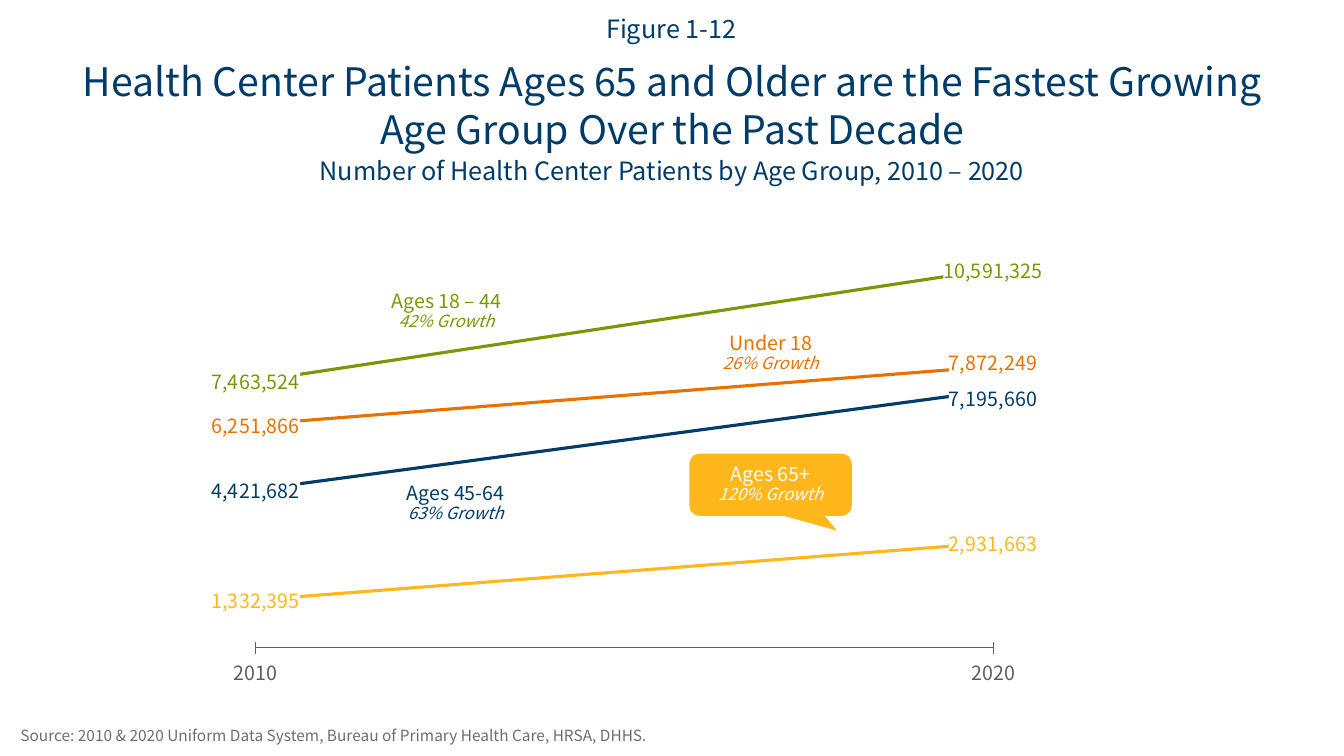
from pptx import Presentation
from pptx.chart.data import CategoryChartData
from pptx.dml.color import RGBColor
from pptx.enum.chart import XL_CHART_TYPE, XL_LABEL_POSITION, XL_MARKER_STYLE, XL_TICK_LABEL_POSITION, XL_TICK_MARK
from pptx.enum.shapes import MSO_SHAPE
from pptx.enum.text import MSO_ANCHOR, PP_ALIGN
from pptx.oxml import parse_xml
from pptx.oxml.ns import nsdecls
from pptx.util import Pt

FONT = "Noto Sans CJK JP"
HUES = {"navy": "003C6A", "green": "789904", "orange": "E87200", "gold": "FFB71B",
        "gray": "5E5E5E", "note": "6D6E71", "white": "FFFFFF"}
GROUPS = [
    ("Series 1", (6251866, 7872249), "orange", "navy", 8, -0.01),
    ("Series 2", (7463524, 10591325), "green", "orange", 9, 0),
    ("Series 3", (4421682, 7195660), "navy", "green", 8, 0.015),
    ("Series 4", (1332395, 2931663), "gold", "gold", 8, 0),
]
TAGS = [
    ("Ages 18 – 44", "42% Growth", "green", (258.5, 205, 121, 39)),
    ("Under 18", "26% Growth", "orange", (492.5, 235, 116, 39)),
    ("Ages 45-64", "63% Growth", "navy", (265, 342, 121, 39)),
]


class Deck:
    """Holds the style and the current slide."""

    def __init__(self):
        self.file = Presentation()
        self.file.slide_width, self.file.slide_height = Pt(960), Pt(540)
        self.slide = self.file.slides.add_slide(self.file.slide_layouts[5])

    def hue(self, name):
        return RGBColor.from_string(HUES[name])

    def style(self, font, size, hue):
        font.name, font.size = FONT, Pt(size)
        font.color.rgb = self.hue(hue)

    def fill(self, shape, lines, hue, anchor=MSO_ANCHOR.TOP, align=PP_ALIGN.CENTER, gap=0, space=None):
        frame = shape.text_frame
        frame.word_wrap, frame.vertical_anchor = True, anchor
        frame.text = "\n".join(text for text, size, slant in lines)
        for para, (text, size, slant) in zip(frame.paragraphs, lines):
            para.alignment, para.line_spacing = align, space
            para.space_before = Pt(gap)
            for run in para.runs:
                self.style(run.font, size, hue)
                run.font.italic = slant

    def title(self, box, lines):
        shape = self.slide.shapes.title
        shape.left, shape.top, shape.width, shape.height = map(Pt, box)
        shape.text_frame.margin_top = 0
        self.fill(shape, lines, "navy", gap=4.3, space=0.9)

    def text(self, box, lines, hue, **look):
        shape = self.slide.shapes.add_textbox(*map(Pt, box))
        self.fill(shape, lines, hue, **look)

    def callout(self, box, lines, back):
        shape = self.slide.shapes.add_shape(MSO_SHAPE.ROUNDED_RECTANGULAR_CALLOUT, *map(Pt, box))
        shape.shadow.inherit = False
        for i, value in enumerate((0.409, 0.738, 0.167)):
            shape.adjustments[i] = value
        shape.fill.solid()
        shape.fill.fore_color.rgb = self.hue(back)
        shape.line.fill.background()
        self.fill(shape, lines, "white", anchor=MSO_ANCHOR.MIDDLE, space=0.9)

    def layout(self, **parts):
        body = "".join(f'<c:{key} val="{value}"/>' for key, value in parts.items())
        return parse_xml(f'<c:layout {nsdecls("c")}><c:manualLayout>{body}</c:manualLayout></c:layout>')

    def back(self):
        return parse_xml(f'<c:spPr {nsdecls("c", "a")}><a:solidFill><a:srgbClr val="{HUES["white"]}"/>'
                         '</a:solidFill><a:ln><a:noFill/></a:ln></c:spPr>')

    def series(self, line, hue, dot, size, shift):
        line.smooth = False
        line.format.line.width = Pt(2.25)
        line.format.line.color.rgb = self.hue(hue)
        mark = line.marker
        mark.style, mark.size = XL_MARKER_STYLE.CIRCLE, size
        mark.format.fill.solid()
        mark.format.fill.fore_color.rgb = self.hue(dot)
        mark.format.line.fill.background()
        tags = line.data_labels
        tags.show_value, tags.position = True, XL_LABEL_POSITION.CENTER
        tags.number_format, tags.number_format_is_linked = "#,##0", False
        self.style(tags.font, 14, hue)
        tags.font._element.getparent().getparent().getparent().addprevious(self.back())
        if shift:
            tag = line.points[1].data_label
            self.style(tag.font, 14, hue)
            tag.position = XL_LABEL_POSITION.CENTER
            node = tags._element.find("c:dLbl", tags._element.nsmap)
            node.find("c:idx", node.nsmap).addnext(self.layout(x=0, y=shift))
            node.find("c:txPr", node.nsmap).addprevious(self.back())

    def chart(self, box, cats, groups):
        data = CategoryChartData(number_format="#,##0")
        data.categories = cats
        for name, values, *look in groups:
            data.add_series(name, values)
        chart = self.slide.shapes.add_chart(XL_CHART_TYPE.LINE_MARKERS, *map(Pt, box), data).chart
        chart.has_legend = chart.has_title = False
        self.style(chart.font, 12, "gray")
        axis = chart.category_axis
        axis.major_tick_mark = XL_TICK_MARK.CROSS
        axis.tick_label_position = XL_TICK_LABEL_POSITION.LOW
        axis.format.line.width = Pt(0.75)
        axis.format.line.color.rgb = self.hue("gray")
        self.style(axis.tick_labels.font, 14, "gray")
        scale = chart.value_axis
        scale.minimum_scale, scale.maximum_scale = 0, 11000000
        scale.has_major_gridlines = scale.visible = False
        scale._element.find("c:crosses", scale._element.nsmap).addnext(
            parse_xml(f'<c:crossBetween {nsdecls("c")} val="midCat"/>'))
        for old in scale._element.findall("c:crossBetween", scale._element.nsmap)[1:]:
            scale._element.remove(old)
        plot = chart.plots[0]
        plot.vary_by_categories = False
        area = plot._element.getparent()
        for old in area.findall("c:layout", area.nsmap):
            area.remove(old)
        area.insert(0, self.layout(layoutTarget="inner", xMode="edge", yMode="edge",
                                   x=0.184, y=0.085, w=0.654, h=0.81))
        for line, (name, values, *look) in zip(plot.series, groups):
            self.series(line, *look)


def main():
    deck = Deck()
    deck.title((34.5, 44.5, 891, 130), [
        ("Health Center Patients Ages 65 and Older are the Fastest Growing", 28, False),
        ("Age Group Over the Past Decade", 28, False),
        ("Number of Health Center Patients by Age Group, 2010 – 2020", 18, False)])
    deck.text((385, 4.5, 189, 34.5), [("Figure 1-12", 18, False)], "navy",
              anchor=MSO_ANCHOR.MIDDLE, space=0.9)
    deck.text((7.5, 459.5, 944.5, 76), [
        ("Source: 2010 & 2020 Uniform Data System, Bureau of Primary Health Care, HRSA, DHHS.", 11, False)],
        "note", anchor=MSO_ANCHOR.BOTTOM, align=PP_ALIGN.JUSTIFY, space=0.9)
    deck.chart((34.5, 152.5, 805.5, 346.5), ("2010", "2020"), GROUPS)
    for name, growth, hue, box in TAGS:
        deck.text(box, [(name, 14, False), (growth, 12, True)], hue, space=0.9)
    deck.callout((492.5, 324, 116, 44.5), [("Ages 65+", 14, False), ("120% Growth", 12, True)], "gold")
    deck.file.save("out.pptx")


if __name__ == "__main__":
    main()
